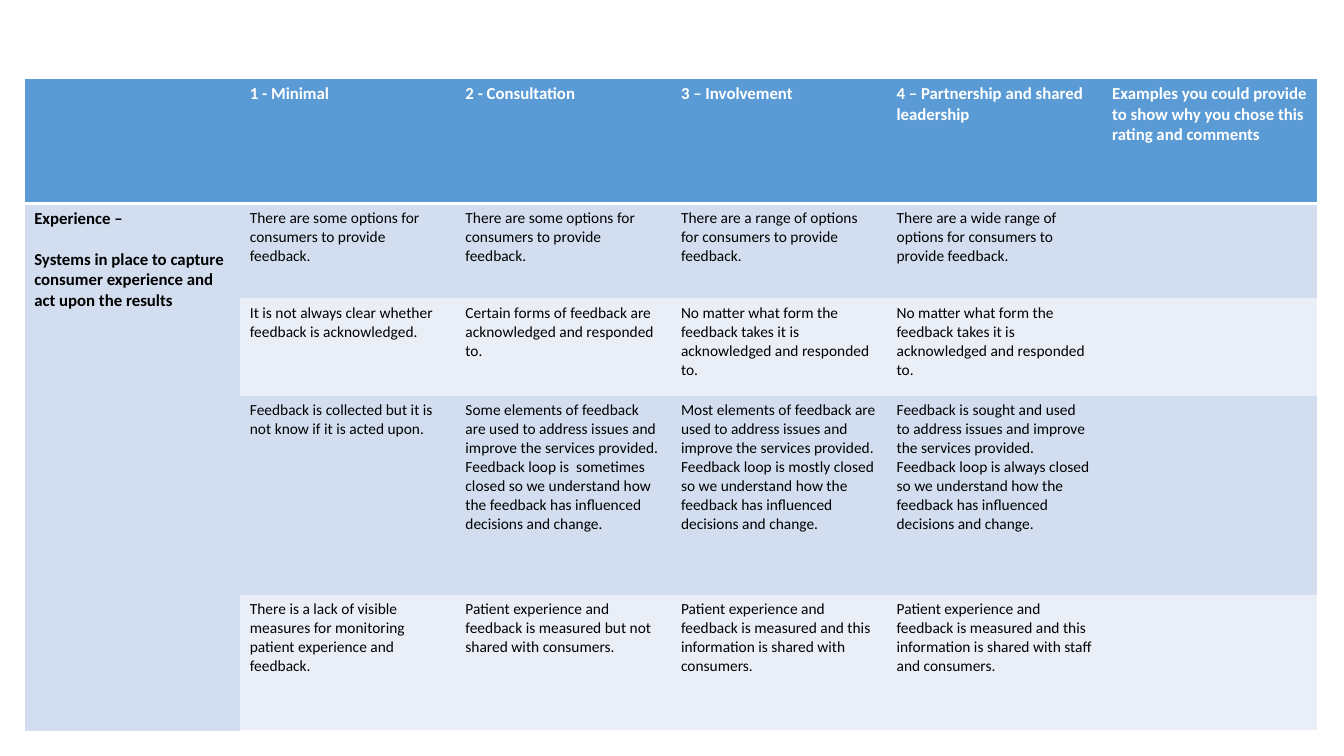
from lxml import etree
from pptx import Presentation
from pptx.dml.color import RGBColor
from pptx.oxml.ns import qn
from pptx.util import Inches, Pt

WHITE = RGBColor(0xFF, 0xFF, 0xFF)
BLACK = RGBColor(0x00, 0x00, 0x00)
HEADER_BLUE = RGBColor(0x5B, 0x9B, 0xD5)
BAND_DARK = RGBColor(0xD2, 0xDE, 0xEF)
BAND_LIGHT = RGBColor(0xEA, 0xEF, 0xF7)

FONT = "Calibri"
LEFT, TOP, WIDTH = 0.24, 0.78, 12.83
ROW_HEIGHTS = [1.24, 0.94, 0.97, 1.97, 1.35]

RATINGS = [
    "",
    "1 - Minimal",
    "2 - Consultation",
    "3 – Involvement",
    "4 – Partnership and shared leadership",
    "Examples you could provide to show why you chose this rating and comments",
]
TOPIC = "Experience –\nSystems in place to capture consumer experience and act upon the results"
CRITERIA = [
    [
        "There are some options for consumers to provide feedback.",
        "There are some options for consumers to provide feedback.",
        "There are a range of options for consumers to provide feedback.",
        "There are a wide range of options for consumers to provide feedback.",
    ],
    [
        "It is not always clear whether feedback is acknowledged.",
        "Certain forms of feedback are acknowledged and responded to.",
        "No matter what form the feedback takes it is acknowledged and responded to.",
        "No matter what form the feedback takes it is acknowledged and responded to.",
    ],
    [
        "Feedback is collected but it is not know if it is acted upon.",
        "Some elements of feedback are used to address issues and improve the services provided. "
        "Feedback loop is  sometimes closed so we understand how the feedback has influenced "
        "decisions and change.",
        "Most elements of feedback are used to address issues and improve the services provided. "
        "Feedback loop is mostly closed so we understand how the feedback has influenced "
        "decisions and change.",
        "Feedback is sought and used to address issues and improve the services provided. "
        "Feedback loop is always closed so we understand how the feedback has influenced "
        "decisions and change.",
    ],
    [
        "There is a lack of visible measures for monitoring patient experience and feedback.",
        "Patient experience and feedback is measured but not shared with consumers.",
        "Patient experience and feedback is measured and this information is shared with consumers.",
        "Patient experience and feedback is measured and this information is shared with staff "
        "and consumers.",
    ],
]


def set_borders(cell, widths):
    properties = cell._tc.get_or_add_tcPr()
    for side in "LRTB":
        width = widths.get(side, 0)
        line = etree.SubElement(properties, qn(f"a:ln{side}"), w=str(Pt(width)))
        if width:
            fill = etree.SubElement(line, qn("a:solidFill"))
            etree.SubElement(fill, qn("a:srgbClr"), val=str(WHITE))
        else:
            etree.SubElement(line, qn("a:noFill"))


def edge_widths(row, column):
    widths = {}
    if column == 0:
        widths["L"] = 1
    if column == len(RATINGS) - 1:
        widths["R"] = 1
    if row == 0:
        widths.update(T=1, B=3)
    if row == 1:
        widths["T"] = 3
    if row == len(CRITERIA):
        widths["B"] = 1
    return widths


def fill_cell(cell, text, background, color, size, bold):
    cell.fill.solid()
    cell.fill.fore_color.rgb = background
    cell.text = text
    for paragraph in cell.text_frame.paragraphs:
        paragraph.font.size = Pt(size)
        for run in paragraph.runs:
            run.font.name = FONT
            run.font.size = Pt(size)
            run.font.bold = bold
            run.font.color.rgb = color


def add_rating_table(slide):
    columns = len(RATINGS)
    table = slide.shapes.add_table(
        len(ROW_HEIGHTS), columns,
        Inches(LEFT), Inches(TOP), Inches(WIDTH), Inches(sum(ROW_HEIGHTS)),
    ).table
    table.first_row = False
    table.horz_banding = False
    for column in table.columns:
        column.width = Inches(WIDTH / columns)
    for row, height in zip(table.rows, ROW_HEIGHTS):
        row.height = Inches(height)
    return table


def fill_rating_table(table):
    rows = [RATINGS] + [["", *criteria, ""] for criteria in CRITERIA]
    for r, texts in enumerate(rows):
        band = BAND_DARK if r % 2 else BAND_LIGHT
        for c, text in enumerate(texts):
            cell = table.cell(r, c)
            set_borders(cell, edge_widths(r, c))
            if r == 0:
                fill_cell(cell, text, HEADER_BLUE, WHITE, 12, True)
            else:
                fill_cell(cell, text, band, BLACK, 11, False)

    topic_cell = table.cell(1, 0)
    topic_cell.merge(table.cell(len(CRITERIA), 0))
    fill_cell(topic_cell, TOPIC, BAND_DARK, BLACK, 12, True)
    topic_cell.text_frame.paragraphs[0].space_after = Pt(14.6)


def main():
    presentation = Presentation()
    presentation.slide_width = Inches(13.33)
    presentation.slide_height = Inches(7.5)
    slide = presentation.slides.add_slide(presentation.slide_layouts[6])
    fill_rating_table(add_rating_table(slide))
    presentation.save("out.pptx")


if __name__ == "__main__":
    main()
